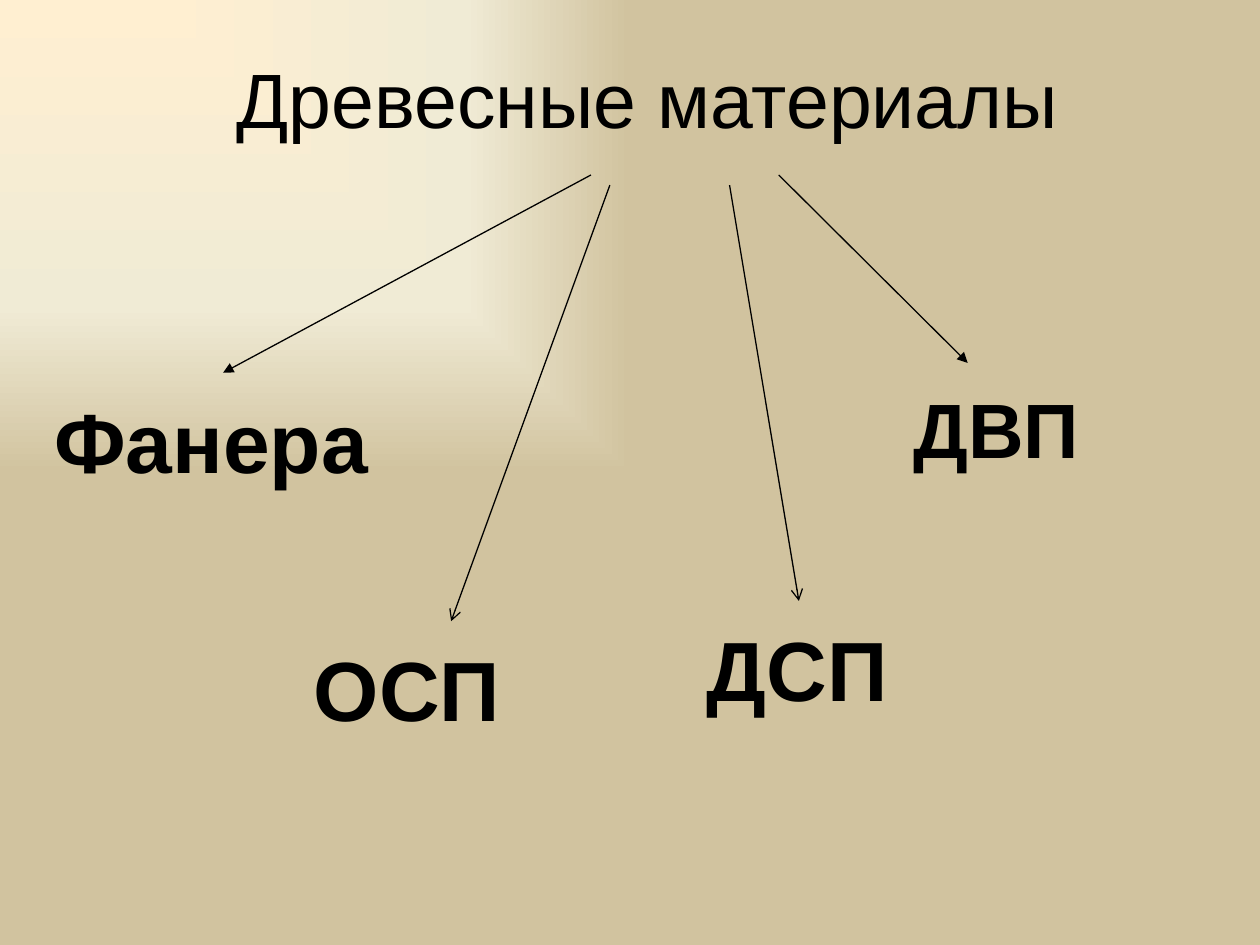
import pptx
import pptx.dml.color
import pptx.enum.shapes
import pptx.enum.text
import pptx.oxml
import pptx.oxml.ns
import pptx.util
from lxml import etree

Pt = pptx.util.Pt
qn = pptx.oxml.ns.qn
ALIGN = pptx.enum.text.PP_ALIGN

BLACK = "000000"
BACKGROUND_STOPS = [(0, "FFEFD1"), (65, "F0EBD5"), (100, "D1C39F")]

# text, left, top, width, height, size, alignment
MATERIALS = [
    ("Фанера", 23.8, 218.9, 254.9, 65.5, 48, ALIGN.LEFT),
    ("ДСП ", 377.3, 349.2, 169.9, 65.5, 48, ALIGN.CENTER),
    ("ДВП", 514.8, 214.6, 193, 60.5, 44, ALIGN.LEFT),
    ("ОСП", 105.1, 360.7, 254.9, 65.5, 48, ALIGN.CENTER),
]

# start, end, arrowhead
ARROWS = [
    ((337.7, 100), (127.5, 213), "triangle"),
    ((445, 100), (553, 207.4), "triangle"),
    ((348.5, 105.8), (257.8, 355), "arrow"),
    ((416.9, 105.8), (456.5, 343.4), "arrow"),
]


def color(value):
    return pptx.dml.color.RGBColor.from_string(value)


def set_background(page, stops):
    """Fill the page with a rectangular gradient centred on the top left corner."""
    page.background.fill.solid()
    solid = page.element.find(".//" + qn("p:bgPr")).find(qn("a:solidFill"))
    stop_xml = "".join(
        f'<a:gs pos="{percent * 1000}"><a:srgbClr val="{value}"/></a:gs>'
        for percent, value in stops
    )
    gradient = pptx.oxml.parse_xml(
        f'<a:gradFill {pptx.oxml.ns.nsdecls("a")} rotWithShape="1">'
        f"<a:gsLst>{stop_xml}</a:gsLst>"
        '<a:path path="rect"><a:fillToRect r="100000" b="100000"/></a:path>'
        "</a:gradFill>"
    )
    solid.getparent().replace(solid, gradient)


def add_text(page, text, left, top, width, height, size, align, bold=True, wrap=True):
    box = page.shapes.add_textbox(Pt(left), Pt(top), Pt(width), Pt(height))
    frame = box.text_frame
    frame.word_wrap = wrap
    frame.auto_size = pptx.enum.text.MSO_AUTO_SIZE.SHAPE_TO_FIT_TEXT
    para = frame.paragraphs[0]
    para.text = text
    para.alignment = align
    para.font.name = "Arial"
    para.font.size = Pt(size)
    para.font.bold = bold
    para.font.color.rgb = color(BLACK)


def add_arrow(page, start, end, head):
    arrow = page.shapes.add_connector(
        pptx.enum.shapes.MSO_CONNECTOR.STRAIGHT, *map(Pt, start + end)
    )
    arrow.line.color.rgb = color(BLACK)
    arrow.line.width = Pt(0.75)
    properties = arrow.element.spPr
    etree.SubElement(properties.find(qn("a:ln")), qn("a:tailEnd"), type=head)
    etree.SubElement(properties, qn("a:effectLst"))


def main():
    deck = pptx.Presentation()
    deck.slide_width, deck.slide_height = Pt(720), Pt(540)
    page = deck.slides.add_slide(deck.slide_layouts[6])
    set_background(page, BACKGROUND_STOPS)
    add_text(page, "Древесные материалы", 128.2, 25.9, 488.9, 60.5, 44,
             ALIGN.LEFT, bold=False, wrap=False)
    for material in MATERIALS:
        add_text(page, *material)
    for arrow in ARROWS:
        add_arrow(page, *arrow)
    deck.save("out.pptx")


if __name__ == "__main__":
    main()
